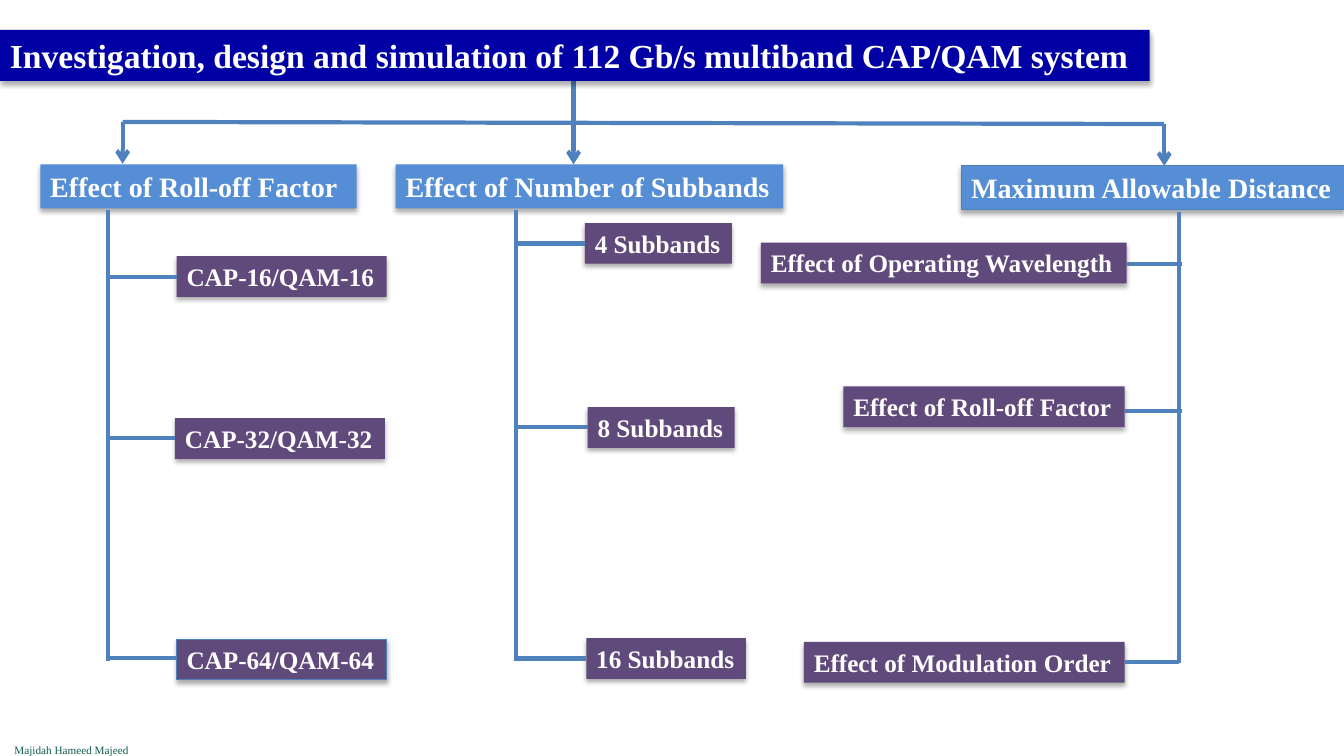
from lxml.etree import SubElement
from pptx import Presentation
from pptx.dml.color import RGBColor
from pptx.enum.shapes import MSO_CONNECTOR, MSO_SHAPE
from pptx.enum.text import MSO_ANCHOR, MSO_AUTO_SIZE, PP_ALIGN
from pptx.oxml import parse_xml
from pptx.oxml.ns import nsdecls, qn
from pptx.util import Pt

COLORS = {
    "title": "0000A4",
    "heading": "558ED5",
    "leaf": "604A7B",
    "line": "4F81BD",
    "text": "FFFFFF",
    "author": "115B4D",
}
HEIGHTS = {"title": 36.4, "heading": 31.5, "leaf": 29.1}
SIZES = {"title": 24, "heading": 20, "leaf": 18}
FONT = "Times New Roman"
SHADOW = (
    f'<a:effectLst {nsdecls("a")}>'
    '<a:outerShdw blurRad="44450" dist="27940" dir="5400000" algn="ctr" rotWithShape="0">'
    '<a:srgbClr val="000000"><a:alpha val="32000"/></a:srgbClr>'
    "</a:outerShdw></a:effectLst>"
)

deck = Presentation()
deck.slide_width, deck.slide_height = Pt(960), Pt(540)
page = deck.slides.add_slide(deck.slide_layouts[6])


def add_label(kind, text, left, top, width, outlined=False):
    """Add a filled, shadowed box of the given kind with its text."""
    box = page.shapes.add_shape(
        MSO_SHAPE.RECTANGLE, Pt(left), Pt(top), Pt(width), Pt(HEIGHTS[kind])
    )
    box.shadow.inherit = False
    properties = box.fill._xPr
    box.fill.solid()
    box.fill.fore_color.rgb = RGBColor.from_string(COLORS[kind])
    if outlined:
        box.line.color.rgb = RGBColor.from_string(COLORS["line"])
        box.line.width = Pt(0.75)
    else:
        box.line.fill.background()
    properties.replace(properties.find(qn("a:effectLst")), parse_xml(SHADOW))
    frame_format = {
        "word_wrap": False,
        "auto_size": MSO_AUTO_SIZE.SHAPE_TO_FIT_TEXT,
        "vertical_anchor": MSO_ANCHOR.TOP,
    }
    for name, value in frame_format.items():
        setattr(box.text_frame, name, value)
    para = box.text_frame.paragraphs[0]
    para.alignment = PP_ALIGN.LEFT
    span = para.add_run()
    span.text = text
    for name, value in {"name": FONT, "size": Pt(SIZES[kind]), "bold": True}.items():
        setattr(span.font, name, value)
    span.font.color.rgb = RGBColor.from_string(COLORS["text"])


def add_line(x1, y1, x2, y2, arrow=False):
    line = page.shapes.add_connector(
        MSO_CONNECTOR.STRAIGHT, Pt(x1), Pt(y1), Pt(x2), Pt(y2)
    )
    line.line.color.rgb = RGBColor.from_string(COLORS["line"])
    line.line.width = Pt(3)
    if arrow:
        SubElement(line.line._get_or_add_ln(), qn("a:tailEnd"), type="arrow")
    SubElement(line._element.spPr, qn("a:effectLst"))


# Title and the arrows down to the three headings
add_line(409.7, 57.6, 409.7, 87.4)
add_line(87.6, 87.1, 831.6, 88.6)
for x, top, bottom in [(87.6, 87.1, 117), (409.7, 87.4, 117.4), (831.6, 88.6, 118.5)]:
    add_line(x, top, x, bottom, arrow=True)
add_label(
    "title",
    "Investigation, design and simulation of 112 Gb/s multiband CAP/QAM system",
    0, 21.4, 821.3,
)

# Heading: text, left, top, width, outlined
# Trunk: x, top, bottom
# Leaf: text, left, top, width, twig y, twig root x, outlined
branches = [
    (
        ("Effect of Roll-off Factor", 28.8, 117.4, 226, False),
        (77, 149.8, 472),
        [
            ("CAP-16/QAM-16", 126.2, 182.9, 150, 198, 77, False),
            ("CAP-32/QAM-32", 125, 298.6, 150, 312.7, 77, False),
            ("CAP-64/QAM-64", 126.2, 456.5, 150, 470, 77, True),
        ],
    ),
    (
        ("Effect of Number of Subbands", 282.6, 117.4, 276.8, False),
        (368.6, 149.8, 472),
        [
            ("4 Subbands", 417.8, 159.3, 105, 174, 368.6, False),
            ("8 Subbands", 419.8, 290.8, 105, 304.9, 369.7, False),
            ("16 Subbands", 418.8, 455.8, 114, 470.3, 368.6, False),
        ],
    ),
    (
        ("Maximum Allowable Distance", 686.7, 118.3, 273.6, True),
        (842.3, 151.2, 473.8),
        [
            ("Effect of Operating Wavelength", 543.5, 173.3, 261.2, 188.8, 844.5, False),
            ("Effect of Roll-off Factor", 602.4, 276, 201, 293.8, 844.5, False),
            ("Effect of Modulation Order", 574.2, 458.5, 229.2, 472.8, 842.3, False),
        ],
    ),
]

for heading, (trunk_x, trunk_top, trunk_bottom), leaves in branches:
    add_label("heading", *heading)
    add_line(trunk_x, trunk_top, trunk_x, trunk_bottom)
    for text, left, top, width, twig_y, root_x, outlined in leaves:
        add_label("leaf", text, left, top, width, outlined)
        near_edge = left if left > trunk_x else left + width
        add_line(root_x, twig_y, near_edge, twig_y)

# Author line
author = page.shapes.add_textbox(Pt(2.9), Pt(527.2), Pt(96.5), Pt(17))
author.text_frame.word_wrap = False
author.text_frame.auto_size = MSO_AUTO_SIZE.SHAPE_TO_FIT_TEXT
para = author.text_frame.paragraphs[0]
para.alignment = PP_ALIGN.CENTER
span = para.add_run()
span.text = "Majidah Hameed Majeed"
span.font.name, span.font.size = FONT, Pt(8)
span.font.color.rgb = RGBColor.from_string(COLORS["author"])

deck.save("out.pptx")
